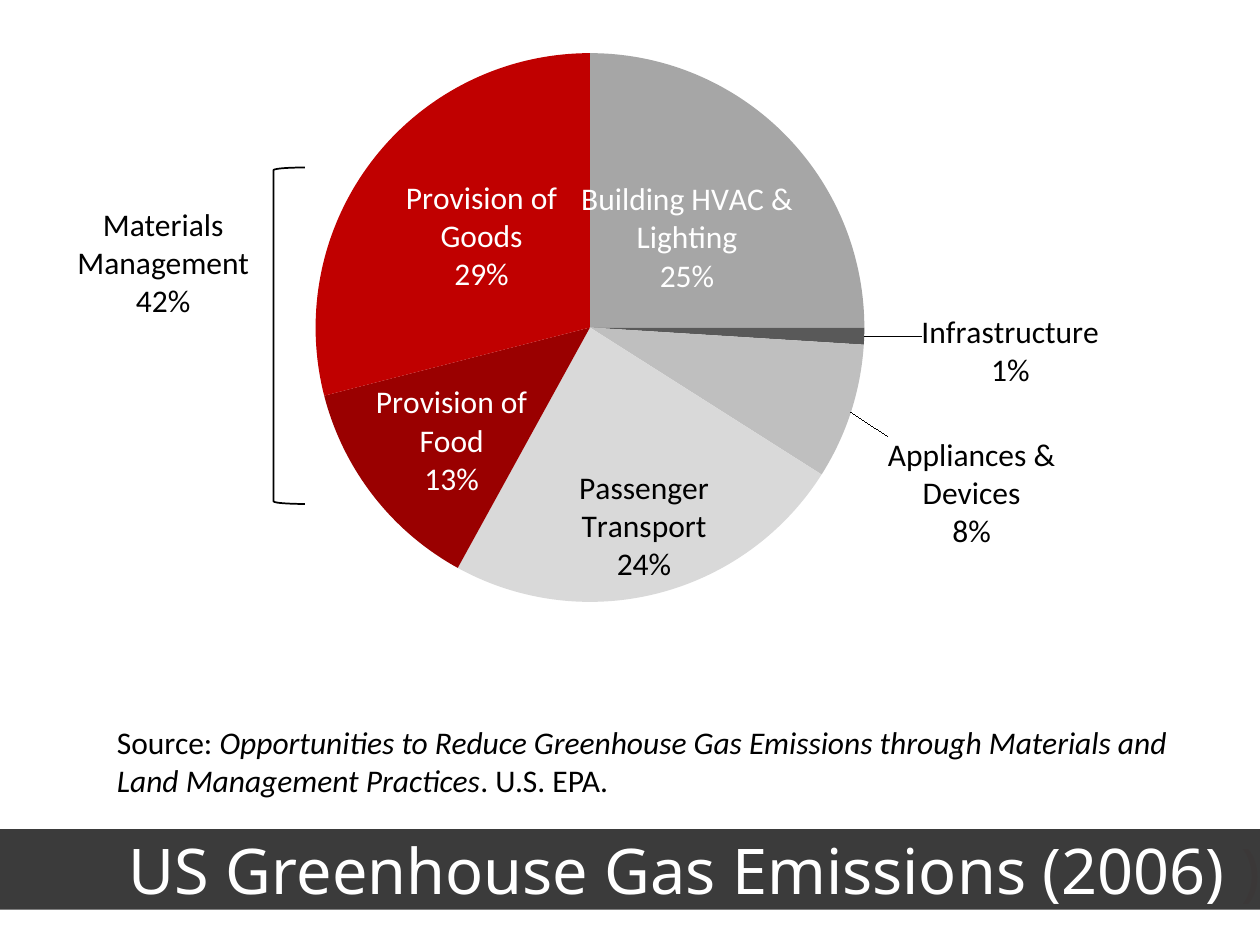
from lxml import etree
from pptx import Presentation
from pptx.chart.data import CategoryChartData
from pptx.dml.color import RGBColor
from pptx.enum.chart import XL_CHART_TYPE as ChartType, XL_LABEL_POSITION as LabelPos
from pptx.enum.shapes import MSO_SHAPE as Shape
from pptx.enum.text import MSO_ANCHOR as Anchor, PP_ALIGN as Align
from pptx.oxml import parse_xml
from pptx.oxml.ns import nsdecls, qn
from pptx.util import Inches, Pt

COLORS = {"black": "000000", "white": "FFFFFF", "bar": "262626", "bar_end": "3B3838",
          "hvac": "A6A6A6", "infrastructure": "595959", "appliances": "BFBFBF",
          "transport": "D9D9D9", "food": "9A0000", "goods": "C00000"}

# name, percent, fill, label colour, label position, label offset (share of chart)
SLICES = [
    ("Building HVAC & Lighting", 25, "hvac", "white", LabelPos.CENTER, (0, 0.01)),
    ("Infrastructure", 1, "infrastructure", "black", LabelPos.OUTSIDE_END, (0.05, 0.02)),
    ("Appliances & Devices", 8, "appliances", "black", LabelPos.OUTSIDE_END, (0.03, 0.03)),
    ("Passenger Transport", 24, "transport", "black", LabelPos.CENTER, (0.02, 0.09)),
    ("Provision of Food", 13, "food", "white", LabelPos.CENTER, (-0.03, 0.04)),
    ("Provision of Goods", 29, "goods", "white", LabelPos.CENTER, (0, -0.01)),
]


def rgb(name):
    return RGBColor.from_string(COLORS[name])


def manual_layout(inner=False, **places):
    """Return a c:layout element; inner makes it a plot area layout."""
    target = '<c:layoutTarget val="inner"/>' if inner else ""
    modes = '<c:xMode val="edge"/><c:yMode val="edge"/>' if inner else ""
    values = "".join(f'<c:{key} val="{value}"/>' for key, value in places.items())
    return parse_xml(f'<c:layout {nsdecls("c")}><c:manualLayout>{target}{modes}{values}'
                     "</c:manualLayout></c:layout>")


class SlideBuilder:
    body_font = "Calibri"
    title_font = "Noto Sans"
    body_size = Pt(18)
    title_size = Pt(36)

    def __init__(self, page):
        self.page = page

    def style(self, font, color="black", name=None, size=None):
        font.name = name or self.body_font
        font.size = size or self.body_size
        font.color.rgb = rgb(color)

    def text(self, place, paragraphs, align=Align.LEFT):
        """Add a text box; each paragraph is a list of (text, italic) spans."""
        box = self.page.shapes.add_textbox(*map(Inches, place))
        frame = box.text_frame
        frame.word_wrap = True
        for index, spans in enumerate(paragraphs):
            para = frame.add_paragraph() if index else frame.paragraphs[0]
            para.alignment = align
            for words, italic in spans:
                span = para.add_run()
                span.text = words
                span.font.italic = italic
                self.style(span.font)

    def title_bar(self, place, spans):
        bar = self.page.shapes.title
        bar.left, bar.top, bar.width, bar.height = map(Inches, place)
        bar.fill.solid()
        bar.fill.fore_color.rgb = rgb("bar")
        fill_color = bar.element.spPr.find(".//" + qn("a:srgbClr"))
        etree.SubElement(fill_color, qn("a:alpha")).set("val", "90000")
        frame = bar.text_frame
        frame.margin_left = frame.margin_right = frame.margin_top = frame.margin_bottom = 0
        frame.vertical_anchor = Anchor.MIDDLE
        frame.word_wrap = True
        para = frame.paragraphs[0]
        para.alignment = Align.RIGHT
        for words, color in spans:
            span = para.add_run()
            span.text = words
            self.style(span.font, color, self.title_font, self.title_size)

    def bracket(self, place):
        bracket = self.page.shapes.add_shape(Shape.LEFT_BRACKET, *map(Inches, place))
        bracket.shadow.inherit = False
        bracket.fill.background()
        bracket.line.color.rgb = rgb("black")
        bracket.line.width = Pt(1)

    def pie(self, place, slices):
        data = CategoryChartData()
        data.categories = [row[0] for row in slices]
        data.add_series("Series 1", [row[1] for row in slices])
        frame = self.page.shapes.add_chart(ChartType.PIE, *map(Inches, place), data)
        chart = frame.chart
        chart.has_legend = chart.has_title = False
        self.style(chart.font)
        chart.plots[0].vary_by_categories = True
        series = chart.plots[0].series[0]
        labels = series.data_labels
        labels.show_value = False
        labels.show_percentage = labels.show_category_name = True
        for point_index, (_, _, fill, color, position, _) in enumerate(slices):
            point = series.points[point_index]
            point.format.fill.solid()
            point.format.fill.fore_color.rgb = rgb(fill)
            self.style(point.data_label.font, color)
            point.data_label.position = position
        self.place_labels(chart, slices)
        area = chart.element.find(".//" + qn("c:plotArea"))
        old = area.find(qn("c:layout"))
        if old is not None:
            area.remove(old)
        area.insert(0, manual_layout(inner=True, x=0.19, y=0.11, w=0.55, h=0.78))

    def place_labels(self, chart, slices):
        """Show name over percent in each label and shift it by its offset."""
        for label, row in zip(chart.element.iter(qn("c:dLbl")), slices):
            x, y = row[-1]
            label.insert(1, manual_layout(x=x, y=y))
            for tag, shown in (("showVal", "0"), ("showCatName", "1"), ("showPercent", "1")):
                label.find(qn("c:" + tag)).set("val", shown)
            etree.SubElement(label, qn("c:separator")).text = "\n"


def main():
    deck = Presentation()
    deck.slide_width, deck.slide_height = Inches(10), Inches(7.5)
    builder = SlideBuilder(deck.slides.add_slide(deck.slide_layouts[5]))
    builder.text((0.83, 5.69, 8.67, 0.71), [[
        ("Source: ", False),
        ("Opportunities to Reduce Greenhouse Gas Emissions through Materials and "
         "Land Management Practices", True),
        (". U.S. EPA.", False)]])
    builder.pie((1, -0.31, 7.92, 5.82), SLICES)
    builder.text((0.42, 1.58, 1.75, 1.01),
                 [[("Materials Management", False)], [("42%", False)]], Align.CENTER)
    builder.bracket((2.17, 1.33, 0.25, 2.67))
    builder.title_bar((0, 6.58, 10, 0.64),
                      [("US Greenhouse Gas Emissions (2006) ", "white"), (")", "bar_end")])
    deck.save("out.pptx")


if __name__ == "__main__":
    main()
